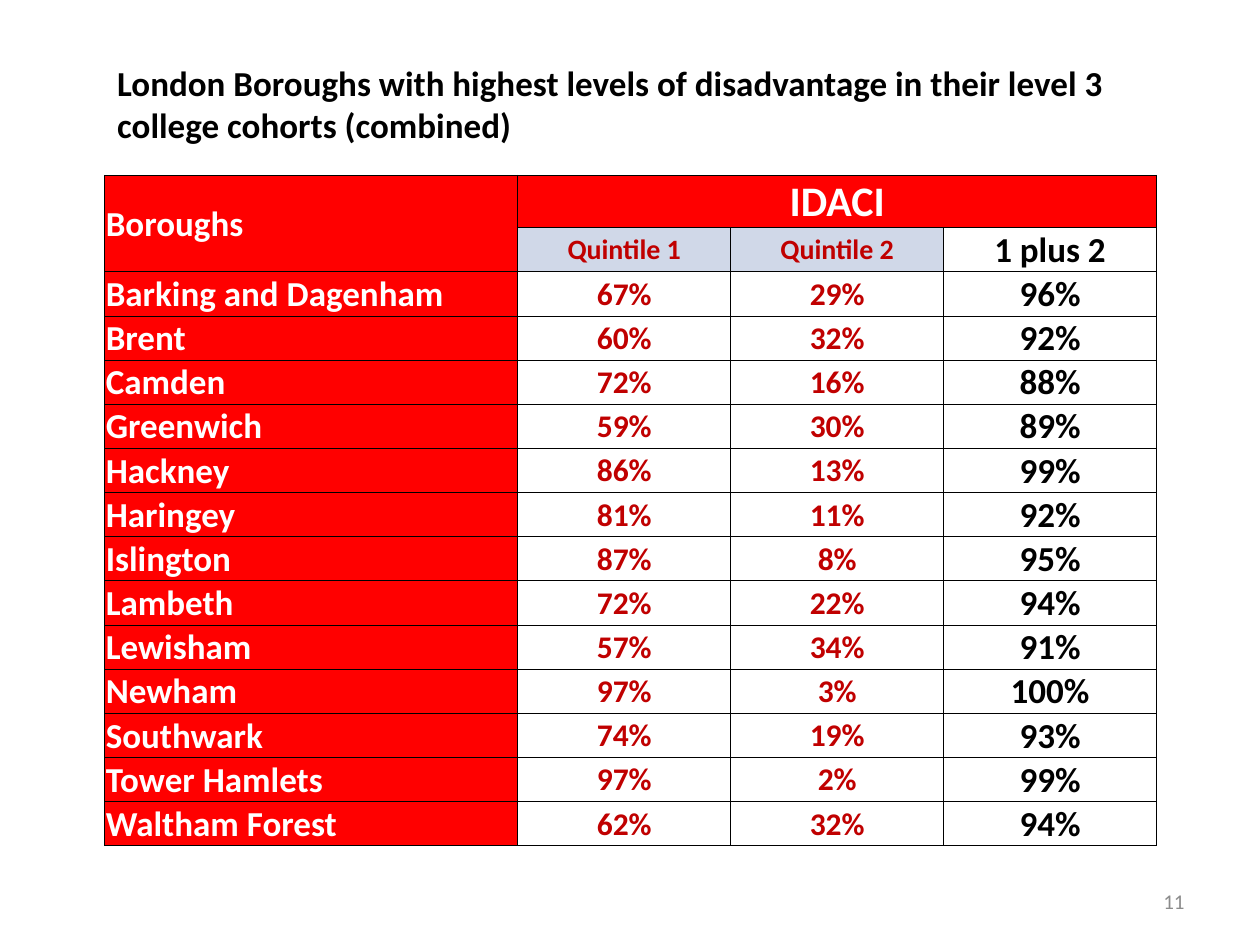
import pptx
import pptx.util
import pptx.dml.color
import pptx.enum.text
import lxml.etree

TITLE = "London Boroughs with highest levels of disadvantage in their level 3 college cohorts (combined)"
PAGE = "11"
HEADINGS = [
    ("Boroughs", "IDACI", "", ""),
    ("", "Quintile 1", "Quintile 2", "1 plus 2"),
]
BOROUGHS = [
    ("Barking and Dagenham", 67, 29, 96),
    ("Brent", 60, 32, 92),
    ("Camden", 72, 16, 88),
    ("Greenwich", 59, 30, 89),
    ("Hackney", 86, 13, 99),
    ("Haringey", 81, 11, 92),
    ("Islington", 87, 8, 95),
    ("Lambeth", 72, 22, 94),
    ("Lewisham", 57, 34, 91),
    ("Newham", 97, 3, 100),
    ("Southwark", 74, 19, 93),
    ("Tower Hamlets", 97, 2, 99),
    ("Waltham Forest", 62, 32, 94),
]
RED, DARK_RED, PALE, WHITE, BLACK, GREY = "FF0000", "C00000", "D0D8E8", "FFFFFF", "000000", "8C8C8C"
COLUMN_WIDTHS = [3.28, 1.69, 1.69, 1.69]
TOP_ROW, ROW = 0.41, 0.345
LEFT = 0.83

inch = pptx.util.Inches
ALIGN = pptx.enum.text.PP_ALIGN
ANCHOR = pptx.enum.text.MSO_ANCHOR


def colour(value):
    return pptx.dml.color.RGBColor.from_string(value)


def write(frame, text, size=20, ink=BLACK, bold=True, align=ALIGN.LEFT):
    paragraph = frame.paragraphs[0]
    paragraph.alignment = align
    run = paragraph.add_run()
    run.text = text
    run.font.name = "Calibri"
    run.font.size = pptx.util.Pt(size)
    run.font.bold = bold
    run.font.color.rgb = colour(ink)


def add_borders(cell):
    properties = cell._tc.get_or_add_tcPr()
    namespace = "{http://schemas.openxmlformats.org/drawingml/2006/main}"
    for side in ("lnL", "lnR", "lnT", "lnB"):
        line = lxml.etree.SubElement(properties, namespace + side, w=str(pptx.util.Pt(0.5)))
        fill = lxml.etree.SubElement(line, namespace + "solidFill")
        lxml.etree.SubElement(fill, namespace + "srgbClr", val=BLACK)


def cell_format(row, column):
    if column == 0:
        return RED, dict(ink=WHITE)
    if row == 0:
        return RED, dict(size=24, ink=WHITE, align=ALIGN.CENTER)
    if column == 3:
        return None, dict(align=ALIGN.CENTER)
    if row == 1:
        return PALE, dict(size=16, ink=DARK_RED, align=ALIGN.CENTER)
    return None, dict(size=18, ink=DARK_RED, align=ALIGN.CENTER)


def add_borough_table(slide):
    rows = HEADINGS + [(name, *(f"{share}%" for share in shares)) for name, *shares in BOROUGHS]
    heights = [TOP_ROW] + [ROW] * (len(rows) - 1)
    table = slide.shapes.add_table(
        len(rows), len(COLUMN_WIDTHS), inch(LEFT), inch(1.39),
        inch(sum(COLUMN_WIDTHS)), inch(sum(heights))).table
    for column, width in zip(table.columns, COLUMN_WIDTHS):
        column.width = inch(width)
    for row, height in zip(table.rows, heights):
        row.height = inch(height)
    for r, texts in enumerate(rows):
        for c, text in enumerate(texts):
            cell = table.cell(r, c)
            fill, text_format = cell_format(r, c)
            cell.margin_left = cell.margin_right = cell.margin_top = inch(0.01)
            cell.margin_bottom = 0
            cell.vertical_anchor = ANCHOR.MIDDLE
            add_borders(cell)
            if fill:
                cell.fill.solid()
                cell.fill.fore_color.rgb = colour(fill)
            else:
                cell.fill.background()
            if text:
                write(cell.text_frame, text, **text_format)
    table.cell(0, 0).merge(table.cell(1, 0))
    table.cell(0, 1).merge(table.cell(0, 3))


def main():
    deck = pptx.Presentation()
    deck.slide_width, deck.slide_height = inch(10), inch(7.5)
    slide = deck.slides.add_slide(deck.slide_layouts[5])

    title = slide.shapes.title
    title.left, title.top, title.width, title.height = map(inch, (LEFT, 0.44, 8.67, 0.77))
    title.text_frame.auto_size = pptx.enum.text.MSO_AUTO_SIZE.NONE
    title.text_frame.vertical_anchor = ANCHOR.TOP
    write(title.text_frame, TITLE)

    add_borough_table(slide)

    page_number = slide.shapes.add_textbox(inch(7.17), inch(6.95), inch(2.33), inch(0.4)).text_frame
    page_number.word_wrap = True
    page_number.vertical_anchor = ANCHOR.MIDDLE
    write(page_number, PAGE, size=12, ink=GREY, bold=False, align=ALIGN.RIGHT)

    deck.save("out.pptx")


if __name__ == "__main__":
    main()
